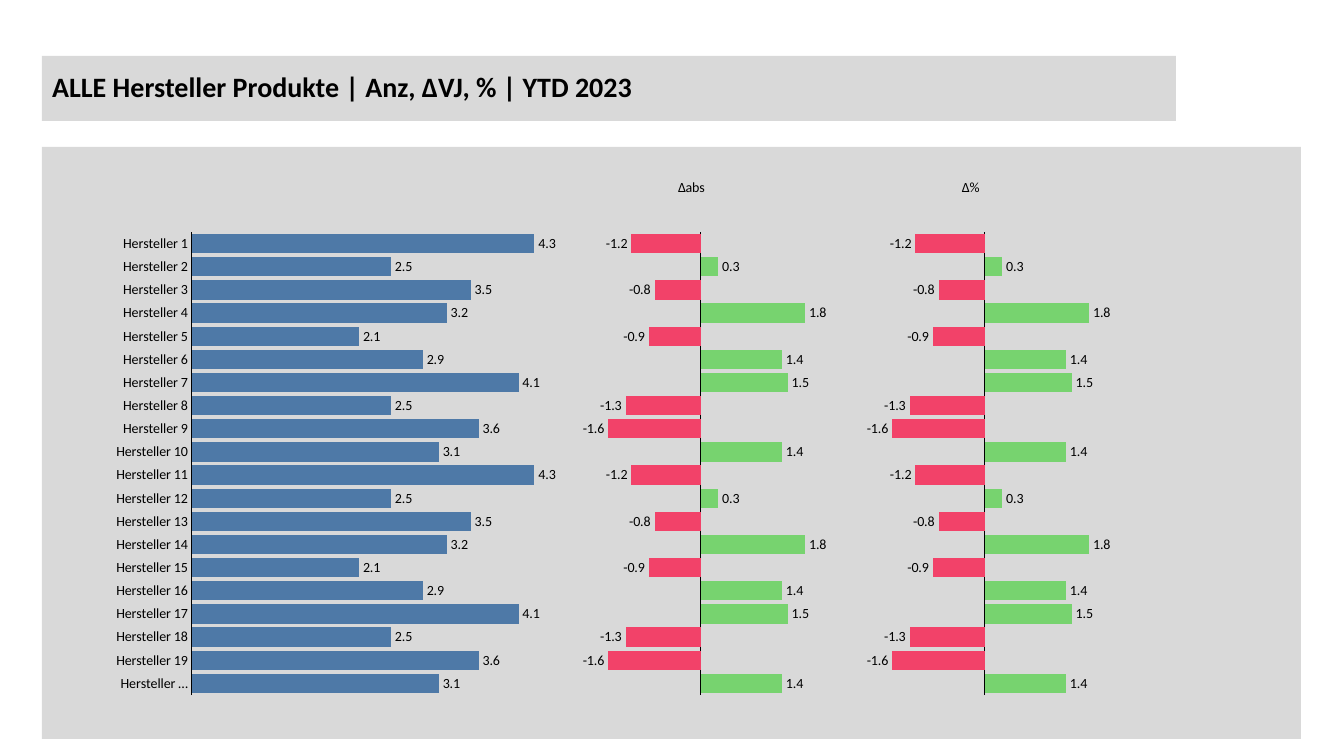
from lxml.etree import SubElement
from pptx import Presentation
from pptx.chart.data import CategoryChartData
from pptx.dml.color import RGBColor
from pptx.enum.chart import XL_CHART_TYPE, XL_LABEL_POSITION, XL_TICK_LABEL_POSITION, XL_TICK_MARK
from pptx.enum.shapes import MSO_SHAPE
from pptx.enum.text import MSO_ANCHOR, PP_ALIGN
from pptx.oxml import parse_xml
from pptx.oxml.ns import nsdecls, qn
from pptx.util import Pt

PX = 914400 / 100.8
BLACK, GREY, BLUE, GREEN, RED = "000000", "D9D9D9", "4E79A7", "77D36F", "F24269"


def paint(color_format, color):
    """Fill or font colour from a hex string."""
    if hasattr(color_format, "solid"):
        color_format.solid()
        color_format = color_format.fore_color
    else:
        color_format = color_format.color
    color_format.rgb = RGBColor.from_string(color)


def set_layout(parent, index, target=None, **edges):
    """Give a chart part a fixed place, in shares of the chart."""
    for old in parent.findall(qn("c:layout")):
        parent.remove(old)
    layout = parse_xml(f"<c:layout {nsdecls('c')}><c:manualLayout/></c:layout>")
    manual = layout[0]
    if target:
        SubElement(manual, qn("c:layoutTarget")).set("val", target)
    for mode in ("xMode", "yMode"):
        SubElement(manual, qn(f"c:{mode}")).set("val", "edge")
    for name, share in edges.items():
        SubElement(manual, qn(f"c:{name}")).set("val", str(share))
    parent.insert(index, layout)


deck = Presentation()
deck.slide_width, deck.slide_height = round(1344 * PX), round(756 * PX)
page = deck.slides.add_slide(deck.slide_layouts[5])

# Title bar
title = page.shapes.title
title.left, title.top, title.width, title.height = [round(n * PX) for n in (42, 56, 1134, 65)]
paint(title.fill, GREY)
frame = title.text_frame
frame.text = "ALLE Hersteller Produkte | Anz, ΔVJ, % | YTD 2023"
frame.vertical_anchor = MSO_ANCHOR.MIDDLE
frame.word_wrap = True
para = frame.paragraphs[0]
para.alignment = PP_ALIGN.LEFT
para.line_spacing = 0.9
para.font.name, para.font.size, para.font.bold = "Calibri", Pt(20), True
paint(para.font, BLACK)

# Grey panel behind the charts
panel = page.shapes.add_shape(MSO_SHAPE.RECTANGLE, *[round(n * PX) for n in (42, 147, 1259, 592)])
panel.shadow.inherit = False
paint(panel.fill, GREY)
panel.line.fill.background()

# Chart data: the ten values appear twice
makers = [f"Hersteller {n}" for n in range(1, 20)] + ["Hersteller …"]
numbers = [str(n) for n in range(1, 21)]
amounts = [4.3, 2.5, 3.5, 3.2, 2.1, 2.9, 4.1, 2.5, 3.6, 3.1] * 2
changes = [-1.2, 0.3, -0.8, 1.8, -0.9, 1.4, 1.5, -1.3, -1.6, 1.4] * 2

# heading, left, width, categories, values, colour, axis range, plot x and width
charts = [
    ("∆%", 843, 284, numbers, changes, GREEN, (-2, 2), (0.092, 0.816)),
    (None, 57, 576, makers, amounts, BLUE, (0, 5), (0.234, 0.692)),
    ("∆abs", 559, 284, numbers, changes, GREEN, (-2, 2), (0.092, 0.816)),
]

for heading, left, width, categories, values, color, limits, (plot_x, plot_w) in charts:
    data = CategoryChartData(number_format="#,##0.0")
    data.categories = categories
    data.add_series("Series 1", values)
    box = [round(n * PX) for n in (left, 152, width, 581)]
    chart = page.shapes.add_chart(XL_CHART_TYPE.BAR_CLUSTERED, *box, data).chart
    chart.has_legend = False
    chart.font.name, chart.font.size = "Calibri", Pt(10)
    paint(chart.font, BLACK)

    # Heading
    chart.has_title = heading is not None
    if heading:
        chart.chart_title.text_frame.text = heading
        font = chart.chart_title.text_frame.paragraphs[0].font
        font.name, font.size, font.bold = "Calibri", Pt(10), False
        paint(font, BLACK)
        set_layout(chart.chart_title._element, 1, x=0.41, y=0.04)

    # Axes
    axis = chart.category_axis
    axis.reverse_order = True
    axis.major_tick_mark = axis.minor_tick_mark = XL_TICK_MARK.NONE
    axis.has_major_gridlines = False
    axis.format.line.width = Pt(0.75)
    paint(axis.format.line.fill, BLACK)
    axis.tick_labels.font.name = "Arial" if heading else "Calibri"
    axis.tick_labels.font.size = Pt(10)
    paint(axis.tick_labels.font, BLACK)
    if heading:
        axis.tick_label_position = XL_TICK_LABEL_POSITION.NONE
    scale = chart.value_axis
    scale.visible = False
    scale.has_major_gridlines = False
    scale.minimum_scale, scale.maximum_scale = limits

    # Bars, with falls in red
    plot = chart.plots[0]
    plot.gap_width = 20
    plot.vary_by_categories = False
    series = plot.series[0]
    series.invert_if_negative = False
    paint(series.format.fill, color)
    for index, value in enumerate(values):
        if value < 0:
            paint(series.points[index].format.fill, RED)

    # Value labels
    labels = series.data_labels
    labels.show_value = True
    labels.number_format, labels.number_format_is_linked = "#,##0.0", False
    labels.position = XL_LABEL_POSITION.OUTSIDE_END
    labels.font.name, labels.font.size = "Calibri", Pt(10)
    paint(labels.font, BLACK)

    plot_area = chart._chartSpace.chart.plotArea
    set_layout(plot_area, 0, "inner", x=plot_x, y=0.138, w=plot_w, h=0.797)

deck.save("out.pptx")
